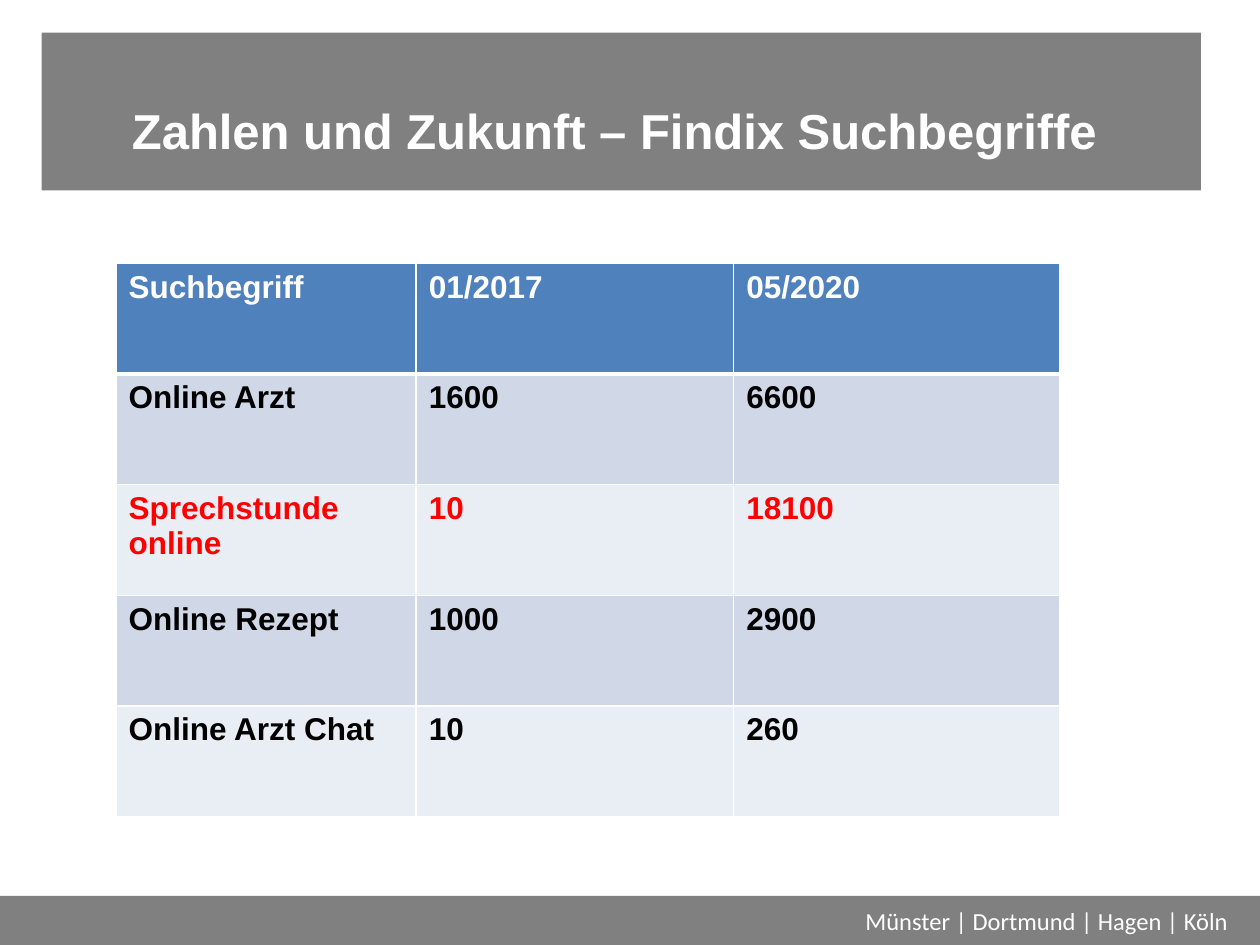
"""Build a slide comparing search term volumes in a table."""
from dataclasses import dataclass

from lxml import etree
from pptx import Presentation, util as u
from pptx.dml.color import RGBColor
from pptx.enum import shapes, text
from pptx.oxml import ns

COLORS = {
    "bar": "808080", "header": "4F81BD", "odd": "D0D8E8", "even": "E9EDF4",
    "white": "FFFFFF", "black": "000000", "highlight": "FF0000",
}
HEADINGS = ("Suchbegriff", "01/2017", "05/2020")
COLUMN_WIDTHS = (6.05, 6.4, 6.58)
ROW_HEIGHT = 2.23


@dataclass(frozen=True)
class Box:
    left: float
    top: float
    width: float
    height: float

    def lengths(self) -> tuple:
        return tuple(u.Cm(value) for value in (self.left, self.top, self.width, self.height))


@dataclass(frozen=True)
class SearchTerm:
    name: str
    before: int
    after: int
    color: str = "black"


TERMS = (
    SearchTerm("Online Arzt", 1600, 6600),
    SearchTerm("Sprechstunde online", 10, 18100, "highlight"),
    SearchTerm("Online Rezept", 1000, 2900),
    SearchTerm("Online Arzt Chat", 10, 260),
)


def rgb(name: str) -> RGBColor:
    return RGBColor.from_string(COLORS[name])


def set_attributes(target, values: dict) -> None:
    for name, value in values.items():
        setattr(target, name, value)


def fill_with(target, color: str) -> None:
    target.fill.solid()
    target.fill.fore_color.rgb = rgb(color)


def write(frame, words: str, color: str, **font_values) -> None:
    paragraph = frame.paragraphs[0]
    run = paragraph.add_run()
    run.text = words
    set_attributes(run.font, font_values)
    run.font.color.rgb = rgb(color)


def add_cell_borders(cell, bottom_width: float) -> None:
    properties = cell._tc.get_or_add_tcPr()
    for side, width in (("L", 1), ("R", 1), ("T", 1), ("B", bottom_width)):
        line = etree.SubElement(properties, ns.qn(f"a:ln{side}"), w=str(u.Pt(width)))
        fill = etree.SubElement(line, ns.qn("a:solidFill"))
        etree.SubElement(fill, ns.qn("a:srgbClr"), val=COLORS["white"])


def fill_row(table, index: int, values: tuple, background: str, color: str) -> None:
    table.rows[index].height = u.Cm(ROW_HEIGHT)
    for column, value in enumerate(values):
        cell = table.cell(index, column)
        add_cell_borders(cell, 3 if index == 0 else 1)
        fill_with(cell, background)
        write(cell.text_frame, str(value), color, name="Arial", size=u.Pt(18), bold=True)


def add_title(slide) -> None:
    title = slide.shapes.title
    set_attributes(title, dict(zip(("left", "top", "width", "height"),
                                   Box(0.84, 0.66, 23.37, 3.18).lengths())))
    fill_with(title, "bar")
    set_attributes(title.text_frame, {
        "vertical_anchor": text.MSO_ANCHOR.MIDDLE, "word_wrap": True,
        "margin_top": u.Cm(0.85), "margin_bottom": u.Cm(0.13),
        "margin_right": u.Cm(0.53),
    })
    title.text_frame.paragraphs[0].alignment = text.PP_ALIGN.CENTER
    write(title.text_frame, "Zahlen und Zukunft – Findix Suchbegriffe", "white",
          name="Arial", size=u.Pt(28), bold=True)


def add_term_table(slide) -> None:
    row_count = len(TERMS) + 1
    box = Box(2.34, 5.31, sum(COLUMN_WIDTHS), row_count * ROW_HEIGHT)
    table = slide.shapes.add_table(row_count, len(HEADINGS), *box.lengths()).table
    for column, width in zip(table.columns, COLUMN_WIDTHS):
        column.width = u.Cm(width)
    fill_row(table, 0, HEADINGS, "header", "white")
    for index, term in enumerate(TERMS, start=1):
        fill_row(table, index, (term.name, term.before, term.after),
                 "odd" if index % 2 else "even", term.color)


def add_footer(slide) -> None:
    footer = slide.shapes.add_shape(shapes.MSO_SHAPE.RECTANGLE,
                                    *Box(0, 18.06, 25.4, 0.99).lengths())
    footer.shadow.inherit = False
    fill_with(footer, "bar")
    footer.line.fill.background()
    set_attributes(footer.text_frame, {
        "vertical_anchor": text.MSO_ANCHOR.MIDDLE, "word_wrap": True,
        "margin_top": u.Cm(0.13), "margin_bottom": u.Cm(0.13),
        "margin_right": u.Cm(0.64),
    })
    footer.text_frame.paragraphs[0].alignment = text.PP_ALIGN.RIGHT
    write(footer.text_frame, "Münster | Dortmund | Hagen | Köln", "white",
          name="Calibri", size=u.Pt(14))


def main() -> None:
    presentation = Presentation()
    set_attributes(presentation, {"slide_width": u.Cm(25.4), "slide_height": u.Cm(19.05)})
    slide = presentation.slides.add_slide(presentation.slide_layouts.get_by_name("Title Only"))
    add_title(slide)
    add_term_table(slide)
    add_footer(slide)
    presentation.save("out.pptx")


if __name__ == "__main__":
    main()
